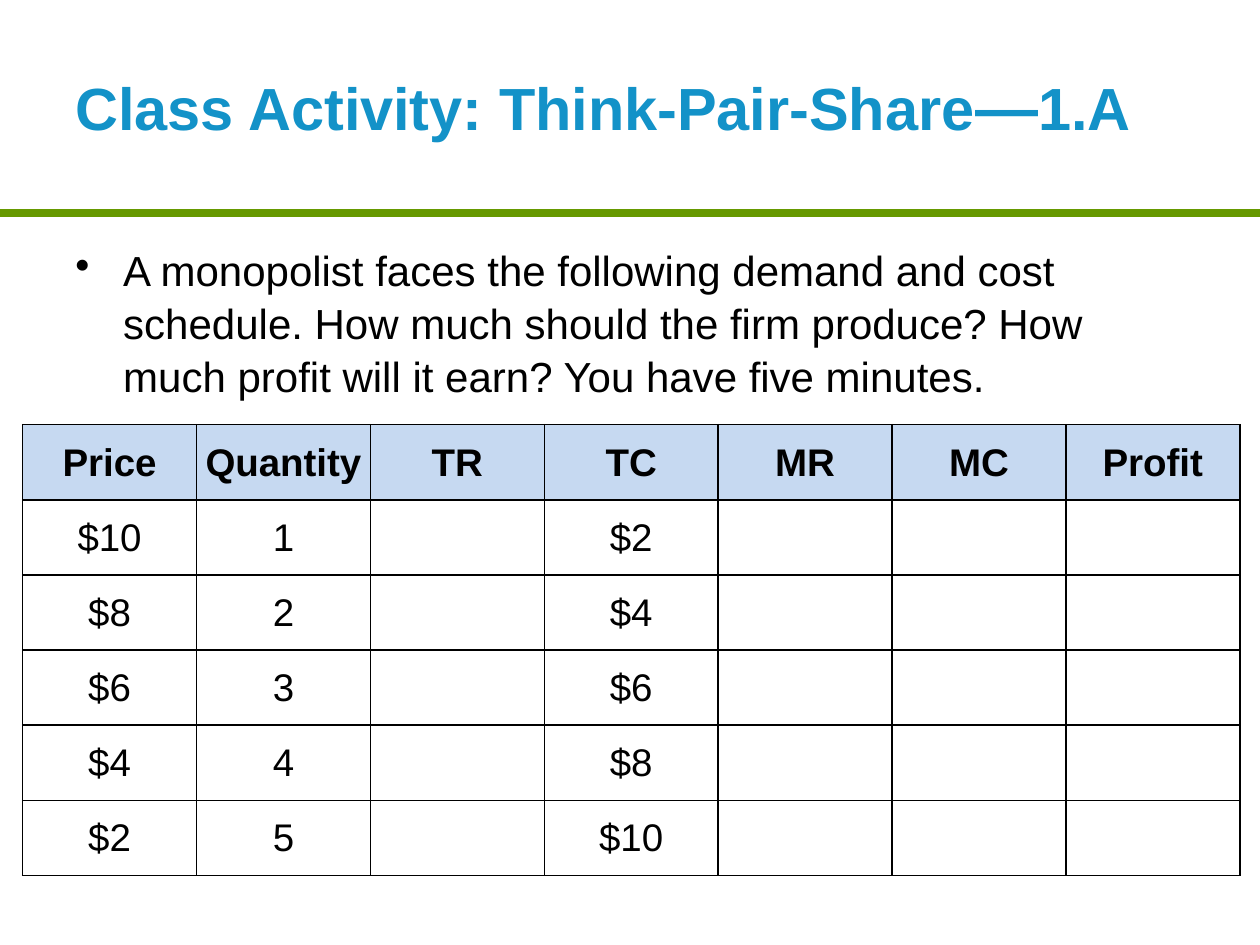
import pptx
import pptx.util
import pptx.dml.color
import pptx.enum.shapes
import pptx.enum.text
import pptx.oxml
import pptx.oxml.ns
import lxml.etree

Pt, Inches = pptx.util.Pt, pptx.util.Inches
ALIGN, ANCHOR = pptx.enum.text.PP_ALIGN, pptx.enum.text.MSO_ANCHOR
qn = pptx.oxml.ns.qn

THEME = {
    "font": "Arial",
    "title": "1392C8", "rule": "669900", "text": "000000", "head": "C6D9F1",
    "title_pt": 34, "dash_pt": 36, "body_pt": 24, "cell_pt": 22,
    "rule_pt": 4.5, "border_pt": 1,
}


def set_font(font, size, color, bold=False):
    font.name = THEME["font"]
    font.size = Pt(THEME[size])
    font.bold = bold
    font.color.rgb = pptx.dml.color.RGBColor.from_string(THEME[color])


def add_borders(cell):
    tcPr = cell._tc.get_or_add_tcPr()
    for i, side in enumerate(("lnL", "lnR", "lnT", "lnB")):
        ln = pptx.oxml.parse_xml(
            f'<a:{side} xmlns:a="http://schemas.openxmlformats.org/drawingml/2006/main"'
            f' w="{Pt(THEME["border_pt"])}"><a:solidFill>'
            f'<a:srgbClr val="{THEME["text"]}"/></a:solidFill></a:{side}>')
        tcPr.insert(i, ln)


prs = pptx.Presentation()
prs.slide_width, prs.slide_height = Inches(10), Inches(7.5)
W, H = prs.slide_width, prs.slide_height
s = prs.slides.add_slide(prs.slide_layouts[5])
margin, content_w = int(W * 0.05), int(W * 0.9)

rule_y = int(H * 0.225)
rule = s.shapes.add_connector(
    pptx.enum.shapes.MSO_CONNECTOR.STRAIGHT, 0, rule_y, W, rule_y)
rule.line.width = Pt(THEME["rule_pt"])
rule.line.color.rgb = pptx.dml.color.RGBColor.from_string(THEME["rule"])
lxml.etree.SubElement(rule._element.spPr, qn("a:effectLst"))

title = s.shapes.title
title.left, title.top, title.width, title.height = margin, 0, content_w, Inches(1.67)
tf = title.text_frame
tf.word_wrap = True
tf.auto_size = pptx.enum.text.MSO_AUTO_SIZE.NONE
tf.vertical_anchor = ANCHOR.MIDDLE
p = tf.paragraphs[0]
p.alignment = ALIGN.LEFT
for text, size in (("Class Activity: Think-Pair-Share", "title_pt"),
                   ("—", "dash_pt"), ("1.A", "title_pt")):
    r = p.add_run()
    r.text = text
    set_font(r.font, size, "title", bold=True)

sp = s.shapes.add_textbox(margin, int(H * 0.25), content_w, int(H * 0.17))
tf = sp.text_frame
tf.word_wrap = True
p = tf.paragraphs[0]
p.text = ("A monopolist faces the following demand and cost schedule. "
          "How much should the firm produce? How much profit will it earn? "
          "You have five minutes.")
p.space_before = Pt(2)
p.line_spacing = 1.05
set_font(p.font, "body_pt", "text")
pPr = p._p.get_or_add_pPr()
pPr.set("marL", str(Inches(0.38)))
pPr.set("indent", str(-Inches(0.38)))
bullet = pptx.oxml.parse_xml(
    '<a:buChar xmlns:a="http://schemas.openxmlformats.org/drawingml/2006/main" char="•"/>')
pPr.find(qn("a:defRPr")).addprevious(bullet)

header = ["Price", "Quantity", "TR", "TC", "MR", "MC", "Profit"]
schedule = [("$10", "1", "$2"), ("$8", "2", "$4"), ("$6", "3", "$6"),
            ("$4", "4", "$8"), ("$2", "5", "$10")]
rows = [header] + [[price, quantity, "", cost, "", "", ""]
                   for price, quantity, cost in schedule]
col_w, row_h = Inches(1.38), Inches(3.58 / len(rows))
table = s.shapes.add_table(
    len(rows), len(header), Inches(0.18), Inches(3.37),
    col_w * len(header), row_h * len(rows)).table
for col in table.columns:
    col.width = col_w
for i, row in enumerate(rows):
    table.rows[i].height = row_h
    for j, text in enumerate(row):
        cell = table.cell(i, j)
        cell.margin_left = cell.margin_right = cell.margin_top = Inches(0.01)
        cell.margin_bottom = 0
        cell.vertical_anchor = ANCHOR.MIDDLE
        if i == 0:
            cell.fill.solid()
            cell.fill.fore_color.rgb = pptx.dml.color.RGBColor.from_string(THEME["head"])
        else:
            cell.fill.background()
        add_borders(cell)
        p = cell.text_frame.paragraphs[0]
        p.text = text
        p.alignment = ALIGN.CENTER
        set_font(p.font, "cell_pt", "text", bold=i == 0)

prs.save("out.pptx")
